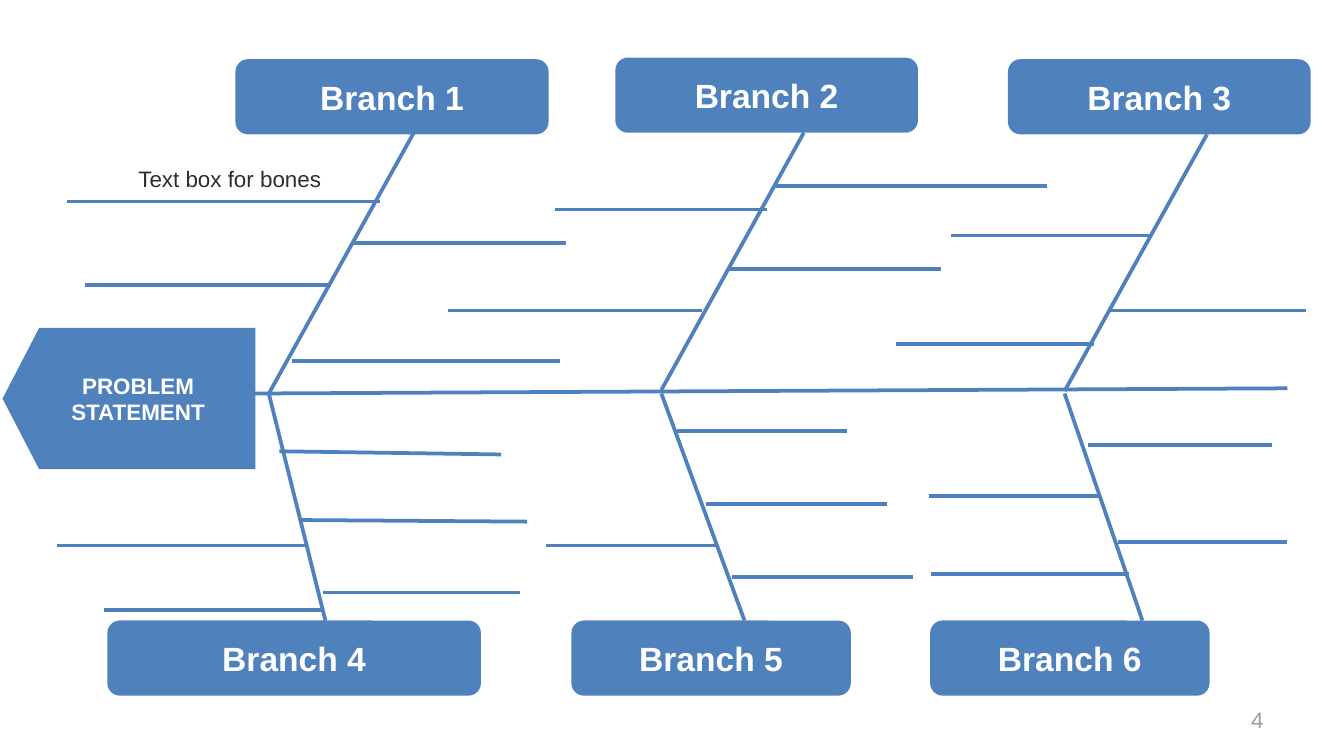
import pptx
import pptx.dml.color
import pptx.enum.shapes
import pptx.enum.text
import pptx.oxml.ns
import pptx.util
from lxml import etree

Cm = pptx.util.Cm
Align = pptx.enum.text.PP_ALIGN
Anchor = pptx.enum.text.MSO_ANCHOR
Shape = pptx.enum.shapes.MSO_SHAPE

BLUE = "4F81BD"
WHITE = "FFFFFF"
HEAD_HEIGHT = 1.42

# All places are in centimetres.
# head: left, top, width; rib: x1, y1, x2, y2
# bones: left x, right x, y, and the right end's y where the bone slants
BRANCHES = [
    {"title": "Branch 1", "head": (4.45, 1.12, 5.92), "rib": (7.82, 2.51, 5.08, 7.44),
     "bones": [(1.27, 7.19, 3.81), (6.68, 10.69, 4.6), (1.6, 6.25, 5.38),
               (5.51, 10.59, 6.83)]},
    {"title": "Branch 2", "head": (11.63, 1.09, 5.72), "rib": (15.19, 2.51, 12.5, 7.37),
     "bones": [(14.61, 19.79, 3.51), (10.49, 14.5, 3.96), (13.77, 17.78, 5.08),
               (8.46, 13.26, 5.87)]},
    {"title": "Branch 3", "head": (19.05, 1.12, 5.72), "rib": (22.81, 2.54, 20.12, 7.39),
     "bones": [(17.98, 21.74, 4.45), (20.96, 24.69, 5.87), (16.94, 20.68, 6.5)]},
    {"title": "Branch 4", "head": (2.03, 11.73, 7.06), "rib": (5.08, 7.44, 6.15, 11.73),
     "bones": [(5.28, 9.47, 8.53, 8.59), (5.69, 9.96, 9.83, 9.86), (1.07, 5.79, 10.31),
               (6.1, 9.83, 11.2), (1.96, 6.12, 11.53)]},
    {"title": "Branch 5", "head": (10.8, 11.73, 5.28), "rib": (12.5, 7.44, 14.07, 11.73),
     "bones": [(12.8, 16, 8.15), (13.34, 16.76, 9.53), (10.31, 13.54, 10.31),
               (13.84, 17.25, 10.9)]},
    {"title": "Branch 6", "head": (17.58, 11.73, 5.28), "rib": (20.12, 7.44, 21.59, 11.73),
     "bones": [(20.57, 24.03, 8.41), (17.55, 20.75, 9.37), (21.13, 24.33, 10.24),
               (17.6, 21.34, 10.85)]},
]


def color(hex_value):
    return pptx.dml.color.RGBColor.from_string(hex_value)


def write(shape, text, size=12, fill=WHITE, bold=False, align=Align.CENTER,
          anchor=Anchor.MIDDLE):
    frame = shape.text_frame
    frame.word_wrap = True
    frame.vertical_anchor = anchor
    paragraph = frame.paragraphs[0]
    paragraph.alignment = align
    run = paragraph.add_run()
    run.text = text
    run.font.name = "Arial"
    run.font.size = pptx.util.Pt(size)
    run.font.bold = bold
    run.font.color.rgb = color(fill)


def add_label(slide, box, text, **text_format):
    label = slide.shapes.add_textbox(*map(Cm, box))
    write(label, text, **text_format)


def add_block(slide, preset, box, text, **text_format):
    block = slide.shapes.add_shape(preset, *map(Cm, box))
    block.shadow.inherit = False
    block.fill.solid()
    block.fill.fore_color.rgb = color(BLUE)
    block.line.fill.background()
    write(block, text, bold=True, **text_format)
    return block


def add_line(slide, x1, y1, x2, y2):
    line = slide.shapes.add_connector(
        pptx.enum.shapes.MSO_CONNECTOR.STRAIGHT, Cm(x1), Cm(y1), Cm(x2), Cm(y2))
    line.line.color.rgb = color(BLUE)
    line.line.width = pptx.util.Pt(2)
    etree.SubElement(line.element.spPr, pptx.oxml.ns.qn("a:effectLst"))


def add_branch(slide, branch):
    """Draw a branch's rib, its bones and its titled head."""
    add_line(slide, *branch["rib"])
    for left, right, y, *slanted_y in branch["bones"]:
        add_line(slide, left, y, right, slanted_y[0] if slanted_y else y)
    add_block(slide, Shape.ROUNDED_RECTANGLE, (*branch["head"], HEAD_HEIGHT),
              branch["title"], size=18)


def add_problem(slide):
    """Draw the fish's head, an arrow pointing left."""
    problem = add_block(slide, Shape.PENTAGON, (0.05, 6.2, 4.78, 2.67),
                        "PROBLEM STATEMENT")
    problem.adjustments[0] = 0.259
    problem.element.spPr.xfrm.set("flipH", "1")


def main():
    presentation = pptx.Presentation()
    presentation.slide_width = Cm(25.4)
    presentation.slide_height = Cm(14.29)
    slide = presentation.slides.add_slide(presentation.slide_layouts[6])

    add_line(slide, 24.33, 7.34, 4.45, 7.44)
    for branch in BRANCHES:
        add_branch(slide, branch)
    add_problem(slide)
    add_label(slide, (1.27, 3, 6.15, 0.58), "Text box for bones",
              fill="2E2E2E", anchor=Anchor.TOP)
    add_label(slide, (18.21, 13.23, 5.92, 0.76), "4",
              fill="9D9D9D", align=Align.RIGHT)

    presentation.save("out.pptx")


if __name__ == "__main__":
    main()
